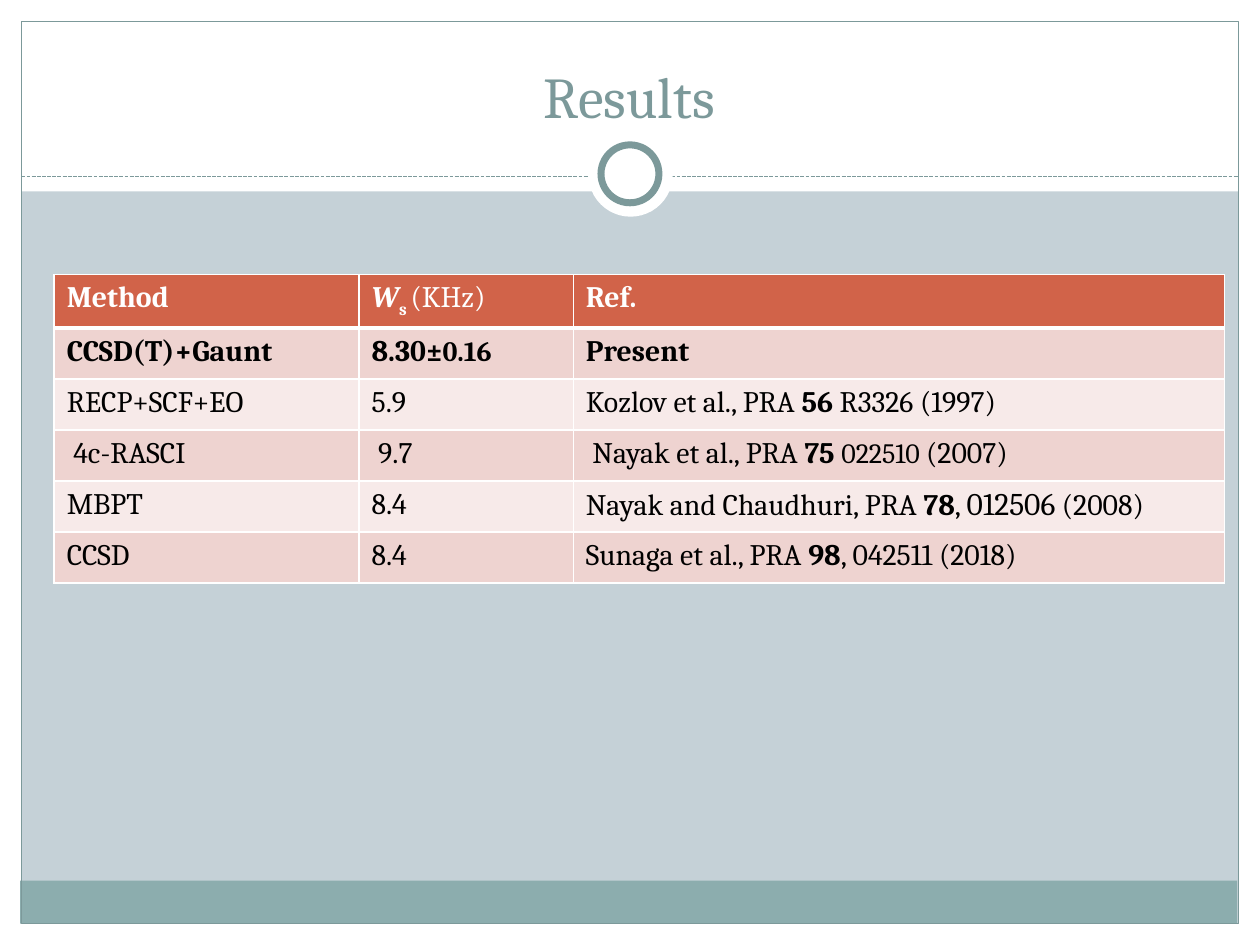
import pptx
import pptx.util
import pptx.dml.color
import pptx.enum.dml
import pptx.enum.shapes
import pptx.enum.text
import pptx.oxml.ns
from lxml import etree

Inches = pptx.util.Inches
Pt = pptx.util.Pt
RGB = pptx.dml.color.RGBColor.from_string
KIND = pptx.enum.shapes.MSO_SHAPE
TEXT = pptx.enum.text
qn = pptx.oxml.ns.qn

HUES = {
    "back": "C5D1D7", "white": "FFFFFF", "black": "000000", "teal": "7C999A",
    "foot": "8CADAE", "head": "D16349", "odd": "EED3D0", "even": "F7EAE9",
}


def write(para, text, size=17, hue="black", bold=False, slant=False, base=0):
    run = para.add_run()
    run.text = text
    font = run.font
    font.name = "Cambria"
    font.size = Pt(size)
    font.bold = bold
    font.italic = slant
    font.color.rgb = RGB(HUES[hue])
    if base:
        run._r.get_or_add_rPr().set("baseline", str(base * 1000))


def draw(kind, left, top, width, height, fill=None, line=None, weight=0.75):
    shape = slide.shapes.add_shape(
        kind, Inches(left), Inches(top), Inches(width), Inches(height))
    shape.shadow.inherit = False
    if fill:
        shape.fill.solid()
        shape.fill.fore_color.rgb = RGB(HUES[fill])
    else:
        shape.fill.background()
    if line:
        shape.line.color.rgb = RGB(HUES[line])
        shape.line.width = Pt(weight)
    else:
        shape.line.fill.background()


deck = pptx.Presentation()
deck.slide_width = Inches(10)
deck.slide_height = Inches(7.5)
slide = deck.slides.add_slide(deck.slide_layouts[6])
slide.background.fill.solid()
slide.background.fill.fore_color.rgb = RGB(HUES["back"])

for box in [(0, 7.33, 10, 0.17), (0, 0, 10, 1.52),
            (0, 0, 0.17, 7.5), (9.83, 0, 0.17, 7.5)]:
    draw(KIND.RECTANGLE, *box, fill="white")
draw(KIND.RECTANGLE, 0.16, 6.99, 9.66, 0.34, fill="foot")
draw(KIND.RECTANGLE, 0.17, 0.17, 9.66, 7.16, line="teal")

rule = slide.shapes.add_connector(
    pptx.enum.shapes.MSO_CONNECTOR.STRAIGHT,
    Inches(0.17), Inches(1.4), Inches(9.83), Inches(1.4))
rule.line.color.rgb = RGB(HUES["teal"])
rule.line.width = Pt(0.75)
rule.line.dash_style = pptx.enum.dml.MSO_LINE.SQUARE_DOT
etree.SubElement(rule._element.spPr, qn("a:effectLst"))

draw(KIND.OVAL, 4.67, 1.05, 0.67, 0.67, fill="white")
draw(KIND.OVAL, 4.77, 1.15, 0.46, 0.46, fill="white", line="teal", weight=4)

title = slide.shapes.add_textbox(
    Inches(0.33), Inches(0.25), Inches(9.33), Inches(0.83)).text_frame
title.word_wrap = True
title.vertical_anchor = TEXT.MSO_ANCHOR.BOTTOM
title.paragraphs[0].alignment = TEXT.PP_ALIGN.CENTER
write(title.paragraphs[0], "Results", size=33, hue="teal")

strong = {"bold": True}
rows = [
    [[("Method", strong)],
     [("W", {"bold": True, "slant": True}), ("s ", {"bold": True, "base": -25}),
      ("(KHz)", {})],
     [("Ref.", strong)]],
    [[("CCSD(T)+Gaunt", strong)],
     [("8.30", strong), ("±0.16", {"bold": True, "size": 16})],
     [("Present", strong)]],
    [[("RECP+SCF+EO", {})], [("5.9", {})],
     [("Kozlov et al., PRA ", {}), ("56", strong), (" R3326 (1997)", {})]],
    [[(" 4c-RASCI", {})], [(" 9.7", {})],
     [(" Nayak et al., PRA ", {}), ("75 ", strong),
      ("022510 ", {"size": 16}), ("(2007)", {})]],
    [[("MBPT", {})], [("8.4", {})],
     [("Nayak and Chaudhuri, PRA ", {}), ("78", strong), (", ", {}),
      ("012506", {"size": 18}), (" (2008)", {})]],
    [[("CCSD", {})], [("8.4", {})],
     [("Sunaga et al., PRA ", {}), ("98", strong), (", 042511 (2018)", {})]],
]
wide = [2.42, 1.7, 5.17]
grid = slide.shapes.add_table(
    len(rows), len(wide), Inches(0.43), Inches(2.18),
    Inches(sum(wide)), Inches(2.43)).table
for col, width in zip(grid.columns, wide):
    col.width = Inches(width)

for r, row in enumerate(rows):
    fill = "head" if r == 0 else "odd" if r % 2 else "even"
    for c, runs in enumerate(row):
        cell = grid.cell(r, c)
        cell.fill.solid()
        cell.fill.fore_color.rgb = RGB(HUES[fill])
        for text, style in runs:
            write(cell.text_frame.paragraphs[0], text,
                  hue="black" if r else "white", **style)
        props = cell._tc.get_or_add_tcPr()
        for n, side in enumerate("LRTB"):
            thick = (r, side) in [(0, "B"), (1, "T")]
            edge = etree.Element(qn("a:ln" + side), w=str(Pt(3 if thick else 1)))
            paint = etree.SubElement(edge, qn("a:solidFill"))
            etree.SubElement(paint, qn("a:srgbClr"), val=HUES["white"])
            props.insert(n, edge)

deck.save("out.pptx")
